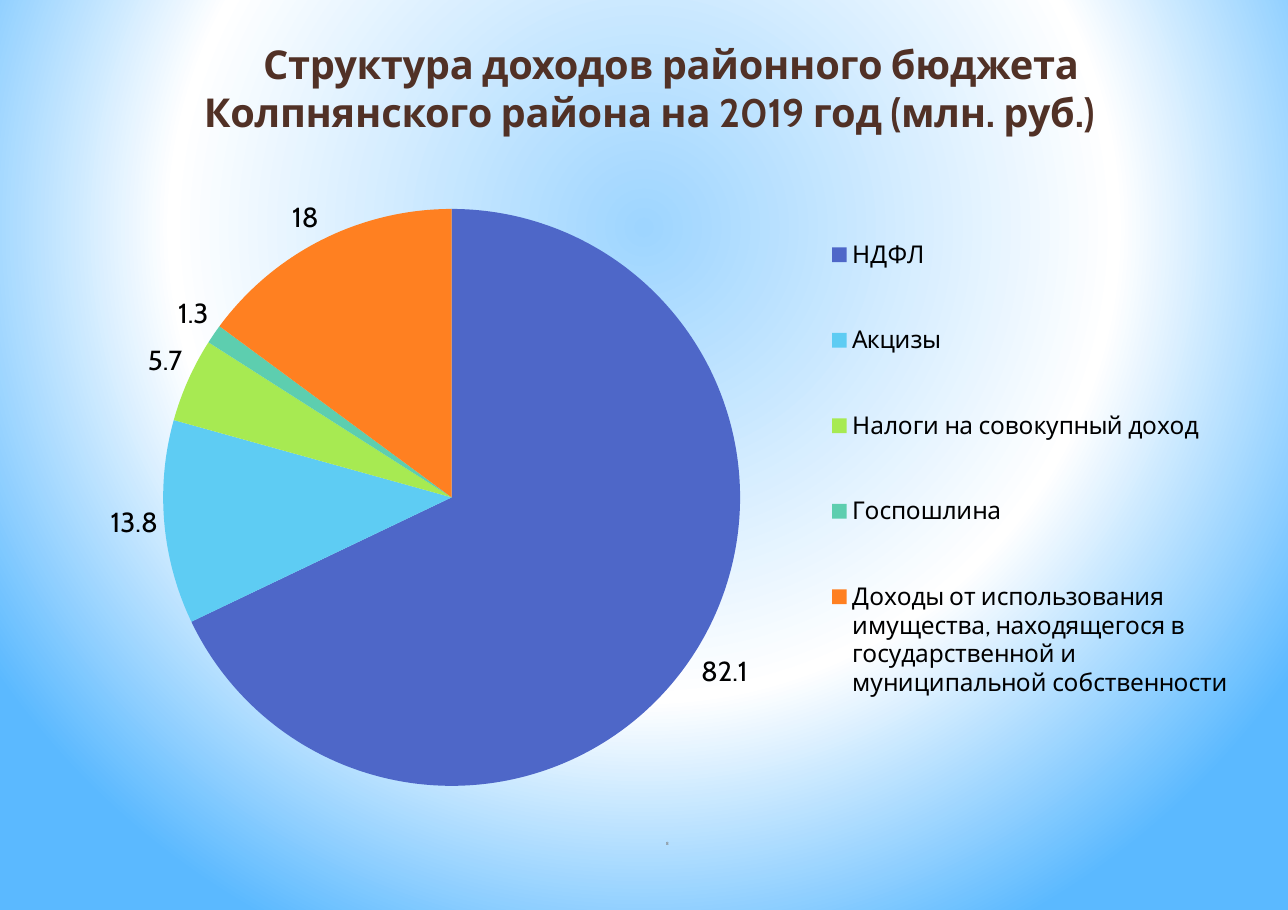
from pptx import Presentation
from pptx.chart.data import CategoryChartData
from pptx.dml.color import RGBColor
from pptx.enum.chart import XL_CHART_TYPE, XL_LABEL_POSITION, XL_LEGEND_POSITION
from pptx.enum.text import MSO_ANCHOR, PP_ALIGN
from pptx.oxml import parse_xml
from pptx.oxml.ns import nsdecls, qn
from pptx.util import Emu, Pt

SCALE = 914400 / 110.2
COLORS = {
    "center": "9ED5FF", "ring": "FFFFFF", "edge": "5BB9FF",
    "title": "513126", "number": "808080", "text": "000000",
}
INCOME = [
    ("НДФЛ", 82.1, "4E67C8"),
    ("Акцизы", 13.8, "5ECCF3"),
    ("Налоги на совокупный доход", 5.7, "A7EA52"),
    ("Госпошлина", 1.3, "5DCEAF"),
    ("Доходы от использования имущества, находящегося в "
     "государственной и муниципальной собственности", 18, "FF8021"),
]


def px(*lengths):
    return [Emu(round(length * SCALE)) for length in lengths]


def add_text(box, text, font_name, size, color, anchor, margin, indent):
    shape = slide.shapes.add_textbox(*px(*box))
    frame = shape.text_frame
    frame.word_wrap = True
    frame.vertical_anchor = anchor
    frame.margin_left = frame.margin_right = 0
    frame.margin_top = frame.margin_bottom = 0
    paragraph = frame.paragraphs[0]
    paragraph.alignment = PP_ALIGN.CENTER
    properties = paragraph._p.get_or_add_pPr()
    for name, length in zip(("marL", "indent"), px(margin, indent)):
        properties.set(name, str(length))
    run = paragraph.add_run()
    run.text = text
    run.font.name = font_name
    run.font.size = Pt(size)
    run.font.bold = True
    run.font.color.rgb = RGBColor.from_string(COLORS[color])
    return run


presentation = Presentation()
presentation.slide_width, presentation.slide_height = px(1288, 910)
slide = presentation.slides.add_slide(presentation.slide_layouts[6])

# Background: radial gradient
slide.background.fill.solid()
stops = "".join(
    f'<a:gs pos="{percent * 1000}"><a:srgbClr val="{COLORS[name]}"/></a:gs>'
    for percent, name in ((0, "center"), (60, "ring"), (100, "edge")))
gradient = parse_xml(
    f'<a:gradFill {nsdecls("a")} rotWithShape="1"><a:gsLst>{stops}</a:gsLst>'
    '<a:path path="circle">'
    '<a:fillToRect l="20000" t="10000" r="20000" b="60000"/>'
    '</a:path></a:gradFill>')
solid = slide.element.find(".//" + qn("a:solidFill"))
solid.getparent().replace(solid, gradient)

# Title and slide number
title = add_text((84, 40, 1130, 97),
                 "Структура доходов районного бюджета "
                 "Колпнянского района на 2019 год (млн. руб.)",
                 "Cabin", 26, "title", MSO_ANCHOR.TOP, 1, 43)
title._r.get_or_add_rPr().set("spc", "-20")
add_text((537, 841, 258, 6), "8", "Arial", 3, "number", MSO_ANCHOR.MIDDLE, 3, 0)

# Income pie chart
data = CategoryChartData()
data.categories = [name for name, value, color in INCOME]
data.add_series("Series 1", [value for name, value, color in INCOME])
chart = slide.shapes.add_chart(
    XL_CHART_TYPE.PIE, *px(52, 171, 1193, 634), data).chart
chart.has_title = False
chart.font.name = "Cabin"
chart.font.size = Pt(18)
chart.font.color.rgb = RGBColor.from_string(COLORS["text"])
plot = chart.plots[0]
plot.vary_by_categories = True
for index, (name, value, color) in enumerate(INCOME):
    fill = plot.series[0].points[index].format.fill
    fill.solid()
    fill.fore_color.rgb = RGBColor.from_string(color)

# Value labels and legend
plot.has_data_labels = True
labels = plot.data_labels
labels.show_value = True
labels.show_percentage = False
labels.position = XL_LABEL_POSITION.OUTSIDE_END
chart.has_legend = True
legend = chart.legend
legend.position = XL_LEGEND_POSITION.RIGHT
legend.include_in_layout = False
legend.font.name = "Cabin"
legend.font.size = Pt(16)
legend.font.color.rgb = RGBColor.from_string(COLORS["text"])

# Places of the pie and the legend, as shares of the chart
chart_element = chart._chartSpace.chart
for parent, target, box in (
        (chart_element.plotArea, '<c:layoutTarget val="inner"/>',
         (0.09, 0.06, 0.49, 0.91)),
        (legend._element, "", (0.64, 0.02, 0.36, 0.9))):
    modes = '<c:xMode val="edge"/><c:yMode val="edge"/>'
    sizes = "".join(f'<c:{key} val="{share}"/>' for key, share in zip("xywh", box))
    layout = parse_xml(f'<c:layout {nsdecls("c")}><c:manualLayout>'
                       f'{target}{modes}{sizes}</c:manualLayout></c:layout>')
    for old in parent.findall(qn("c:layout")):
        parent.remove(old)
    position = 0 if target else 1
    parent.insert(position, layout)

presentation.save("out.pptx")
